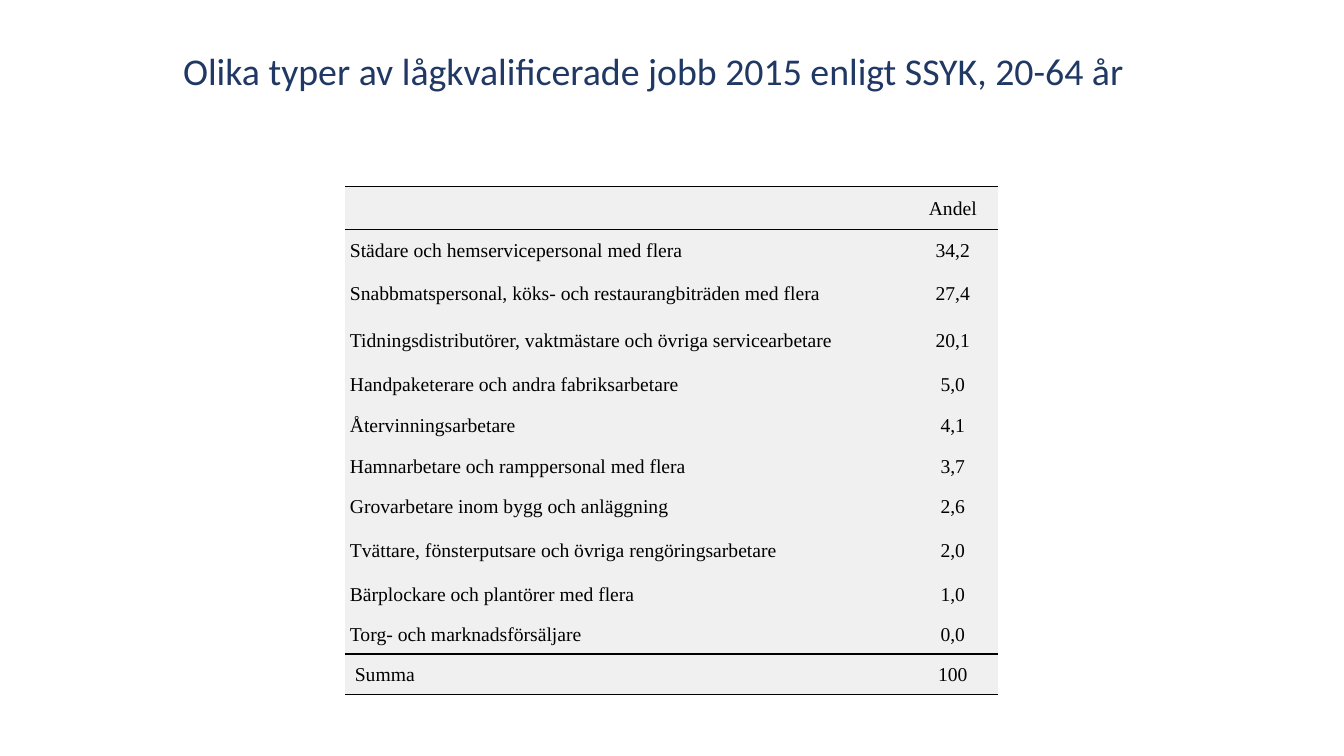
from pptx import Presentation
from pptx.dml.color import RGBColor
from pptx.enum.text import MSO_ANCHOR as Anchor, PP_ALIGN as Align
from pptx.oxml.xmlchemy import OxmlElement
from pptx.util import Inches, Pt

NAVY = RGBColor(0x20, 0x38, 0x64)
BLACK = RGBColor(0, 0, 0)
LIGHT_GREY = RGBColor(0xF0, 0xF0, 0xF0)

TITLE = "Olika typer av lågkvalificerade jobb 2015 enligt SSYK, 20-64 år"
JOB_SHARES = [
    ("", "Andel"),
    ("Städare och hemservicepersonal med flera", "34,2"),
    ("Snabbmatspersonal, köks- och restaurangbiträden med flera", "27,4"),
    ("Tidningsdistributörer, vaktmästare och övriga servicearbetare", "20,1"),
    ("Handpaketerare och andra fabriksarbetare", "5,0"),
    ("Återvinningsarbetare", "4,1"),
    ("Hamnarbetare och ramppersonal med flera", "3,7"),
    ("Grovarbetare inom bygg och anläggning", "2,6"),
    ("Tvättare, fönsterputsare och övriga rengöringsarbetare", "2,0"),
    ("Bärplockare och plantörer med flera", "1,0"),
    ("Torg- och marknadsförsäljare", "0,0"),
    (" Summa", "100"),
]
COLUMN_WIDTHS = [5.58, 0.9]
ROW_HEIGHTS = [0.43, 0.4, 0.46, 0.48, 0.4, 0.41, 0.4, 0.4, 0.47, 0.4, 0.4, 0.4]
# Horizontal rules: around the header and around the total
RULED_EDGES = {0, 1, len(JOB_SHARES) - 1, len(JOB_SHARES)}


def write_text(paragraph, text, font, size, color, align, spacing):
    paragraph.alignment = align
    paragraph.line_spacing = spacing
    run = paragraph.add_run()
    run.text = text
    run.font.name = font
    run.font.size = Pt(size)
    run.font.color.rgb = color


def set_borders(cell, ruled_sides):
    properties = cell._tc.get_or_add_tcPr()
    for side in "LRTB":
        line = OxmlElement(f"a:ln{side}")
        if side in ruled_sides:
            line.set("w", str(Pt(1)))
            fill = OxmlElement("a:solidFill")
            color = OxmlElement("a:srgbClr")
            color.set("val", str(BLACK))
            fill.append(color)
        else:
            fill = OxmlElement("a:noFill")
        line.append(fill)
        properties.append(line)


def add_title(slide, left, top, width, height):
    box = slide.shapes.add_textbox(
        Inches(left), Inches(top), Inches(width), Inches(height))
    frame = box.text_frame
    frame.word_wrap = True
    frame.vertical_anchor = Anchor.MIDDLE
    write_text(frame.paragraphs[0], TITLE, "Calibri", 27, NAVY, Align.CENTER, 0.9)


def add_job_table(slide, left, top, width, height):
    table = slide.shapes.add_table(
        len(JOB_SHARES), len(COLUMN_WIDTHS),
        Inches(left), Inches(top), Inches(width), Inches(height)).table
    table.first_row = table.horz_banding = False

    # Column widths and row heights fill the given box
    for column, share in zip(table.columns, COLUMN_WIDTHS):
        column.width = Inches(width * share / sum(COLUMN_WIDTHS))
    for row, share in zip(table.rows, ROW_HEIGHTS):
        row.height = Inches(height * share / sum(ROW_HEIGHTS))

    # Cells
    for row_index, values in enumerate(JOB_SHARES):
        ruled_sides = [side for side, edge in (("T", row_index), ("B", row_index + 1))
                       if edge in RULED_EDGES]
        for column_index, text in enumerate(values):
            cell = table.cell(row_index, column_index)
            set_borders(cell, ruled_sides)
            cell.fill.solid()
            cell.fill.fore_color.rgb = LIGHT_GREY
            cell.margin_left = cell.margin_right = Inches(0.05)
            cell.margin_top = cell.margin_bottom = 0
            cell.vertical_anchor = Anchor.MIDDLE
            if text:
                write_text(cell.text_frame.paragraphs[0], text, "Times New Roman", 14,
                           BLACK, Align.CENTER if column_index else Align.LEFT, 1.07)


def main():
    presentation = Presentation()
    presentation.slide_width = Inches(13.33)
    presentation.slide_height = Inches(7.5)
    slide = presentation.slides.add_slide(presentation.slide_layouts[6])
    add_title(slide, 0.54, 0, 11.88, 1.45)
    add_job_table(slide, 3.42, 1.85, 6.48, 5.04)
    presentation.save("out.pptx")


if __name__ == "__main__":
    main()
